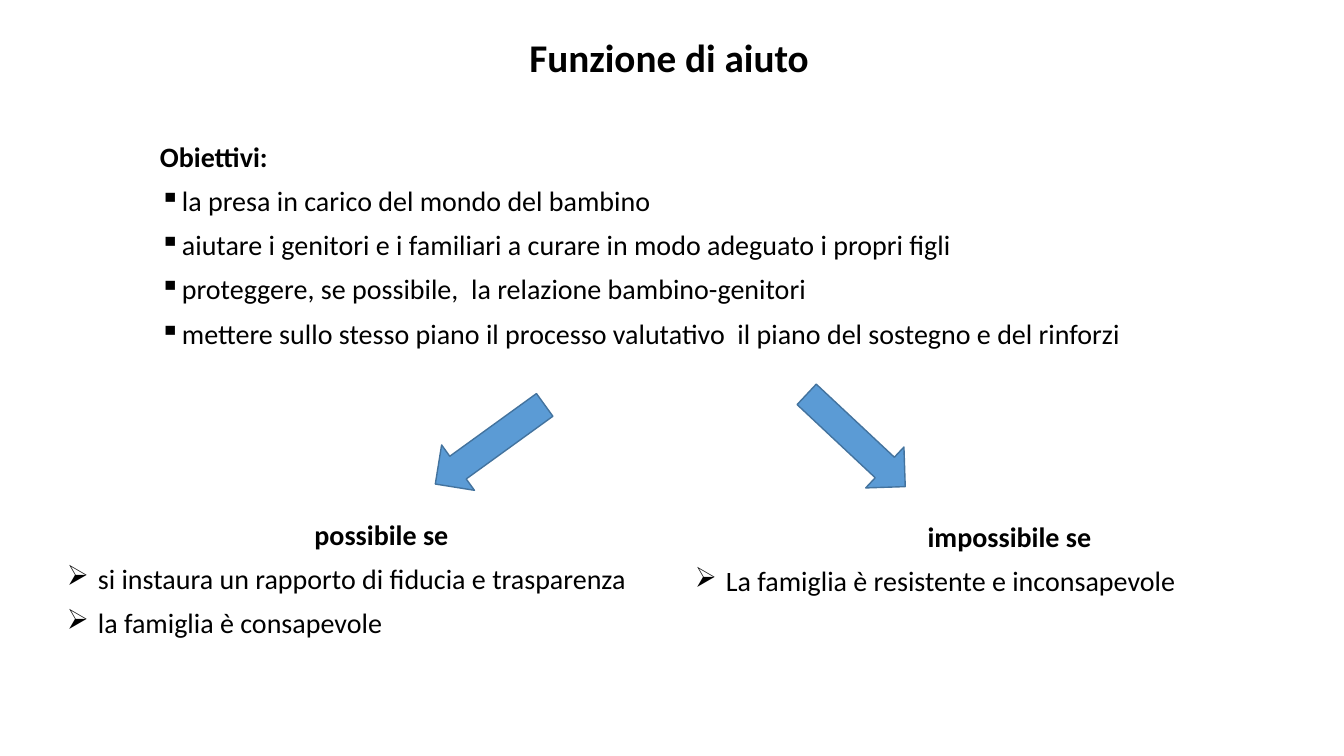
from lxml import etree
from pptx import Presentation
from pptx import util as u
from pptx.dml.color import RGBColor
from pptx.enum import shapes, text
from pptx.oxml.ns import qn

PX = 914400 / 100.8
FONT = "Calibri"
BLACK = RGBColor(0x00, 0x00, 0x00)
BLUE = RGBColor(0x5B, 0x9B, 0xD5)
DARK_BLUE = RGBColor(0x43, 0x73, 0x9E)


def px(n):
    return u.Emu(round(n * PX))


def add_box(s, left, top, width, height):
    tf = s.shapes.add_textbox(px(left), px(top), px(width), px(height)).text_frame
    tf.word_wrap = True
    return tf


def add_line(p, words, size, bold=False, align=text.PP_ALIGN.LEFT):
    p.alignment = align
    p.line_spacing = 0.9
    r = p.add_run()
    r.text = words
    r.font.name = FONT
    r.font.size = u.Pt(size)
    r.font.bold = bold
    r.font.color.rgb = BLACK


def set_bullet(p, char, indent):
    pPr = p._p.get_or_add_pPr()
    pPr.set("marL", str(px(indent)))
    pPr.set("indent", str(-px(indent)))
    etree.SubElement(pPr, qn("a:buChar")).set("char", char)


def add_title(s, words, *place):
    tf = add_box(s, *place)
    tf.vertical_anchor = text.MSO_ANCHOR.MIDDLE
    add_line(tf.paragraphs[0], words, 28, True, text.PP_ALIGN.CENTER)


def add_list(s, place, heading, items, char, indent, align):
    tf = add_box(s, *place)
    add_line(tf.paragraphs[0], heading, 20, True, align)
    for item in items:
        p = tf.add_paragraph()
        set_bullet(p, char, indent)
        p.space_before = u.Pt(10)
        add_line(p, item, 20)


def add_arrow(s, left, top, rotation):
    sp = s.shapes.add_shape(shapes.MSO_SHAPE.DOWN_ARROW,
                            px(left), px(top), px(56), px(135))
    sp.rotation = rotation
    sp.shadow.inherit = False
    sp.fill.solid()
    sp.fill.fore_color.rgb = BLUE
    sp.line.color.rgb = DARK_BLUE
    sp.line.width = u.Pt(1)


def main():
    prs = Presentation()
    prs.slide_width, prs.slide_height = px(1344), px(756)
    s = prs.slides.add_slide(prs.slide_layouts[6])

    add_list(s, (150, 138, 1047, 260), "Obiettivi:", [
        "la presa in carico del mondo del bambino",
        "aiutare i genitori e i familiari a curare in modo adeguato i propri figli",
        "proteggere, se possibile,  la relazione bambino-genitori",
        "mettere sullo stesso piano il processo valutativo  il piano del sostegno e del rinforzi",
    ], "▪", 22, text.PP_ALIGN.LEFT)
    add_title(s, "Funzione di aiuto", 208, 13, 922, 94)
    add_list(s, (57, 516, 649, 143), "possibile se", [
        "si instaura un rapporto di fiducia e trasparenza",
        "la famiglia è consapevole",
    ], "➢", 31, text.PP_ALIGN.CENTER)
    add_list(s, (685, 518, 649, 143), "impossibile se", [
        "La famiglia è resistente e inconsapevole",
    ], "➢", 31, text.PP_ALIGN.CENTER)
    add_arrow(s, 462, 377, 54.1)
    add_arrow(s, 828, 373, 313.1)

    prs.save("out.pptx")


if __name__ == "__main__":
    main()
